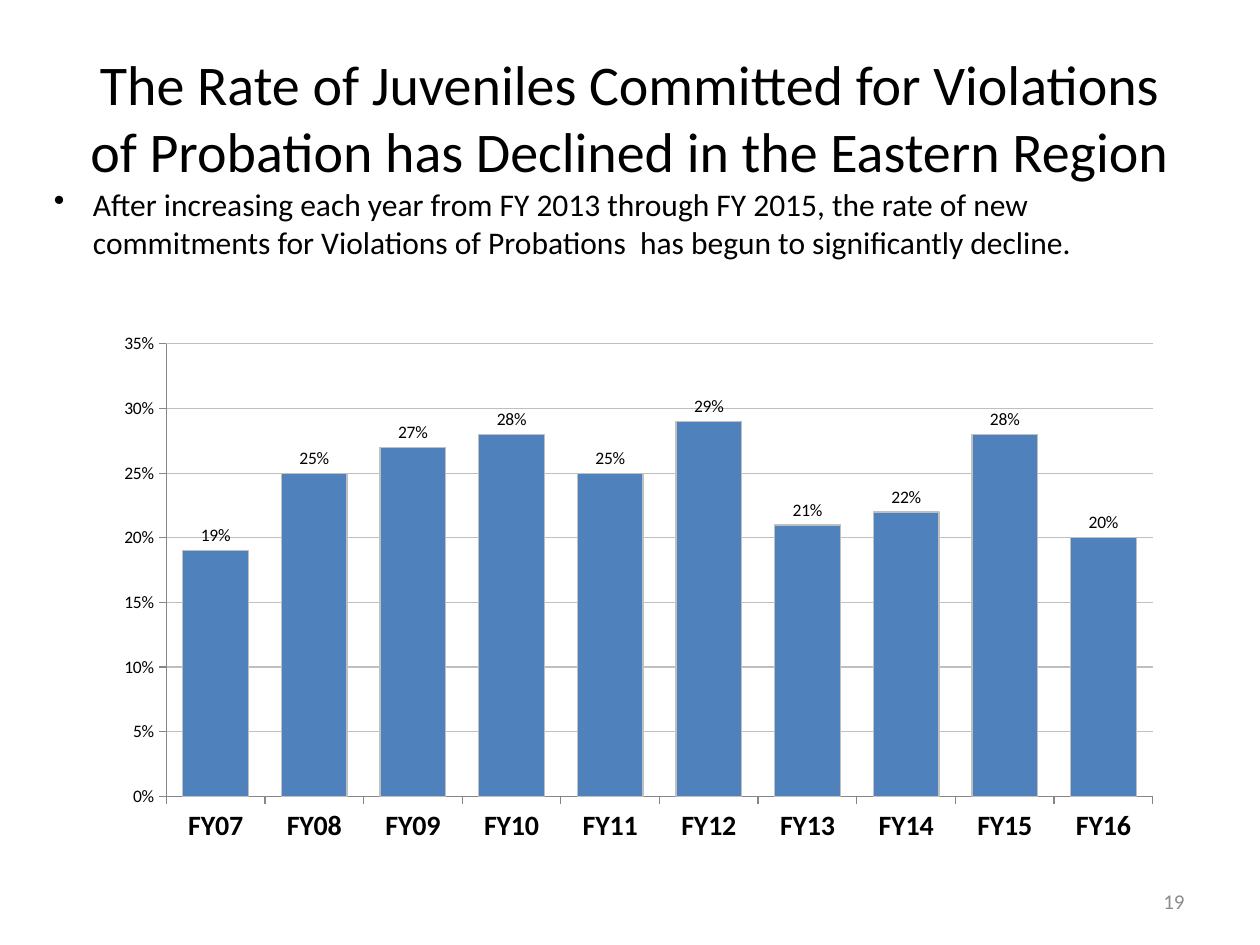
import pptx
import pptx.chart.data
import pptx.dml.color
import pptx.enum.chart
import pptx.enum.text
import pptx.oxml
import pptx.oxml.ns
import pptx.util

COLORS = {"text": "000000", "number": "8C8C8C", "bar": "4F81BD", "grid": "BFBFBF", "axis": "868686"}
RATES = {
    "FY07": 0.19, "FY08": 0.25, "FY09": 0.27, "FY10": 0.28, "FY11": 0.25,
    "FY12": 0.29, "FY13": 0.21, "FY14": 0.22, "FY15": 0.28, "FY16": 0.20,
}
PLOT_AREA = {"x": 0.11, "y": 0.08, "w": 0.87, "h": 0.72}


class SlideBuilder:
    """Holds the style and the current slide, and adds elements to it."""

    def __init__(self, prs, font="Calibri"):
        self.font = font
        self.slide = prs.slides.add_slide(prs.slide_layouts[5])

    def rgb(self, color):
        return pptx.dml.color.RGBColor.from_string(COLORS[color])

    def set_font(self, font, size, color="text", bold=False):
        font.name = self.font
        font.size = pptx.util.Pt(size)
        font.bold = bold
        font.color.rgb = self.rgb(color)

    def set_line(self, line, color):
        line.color.rgb = self.rgb(color)
        line.width = pptx.util.Pt(0.75)

    def fill_text(self, sp, text, size, align, anchor, color="text"):
        tf = sp.text_frame
        tf.word_wrap = True
        tf.auto_size = pptx.enum.text.MSO_AUTO_SIZE.NONE
        tf.vertical_anchor = anchor
        p = tf.paragraphs[0]
        p.text = text
        p.alignment = align
        self.set_font(p.font, size, color)
        return p

    def title(self, text, left, top, width, height):
        sp = self.slide.shapes.title
        sp.left, sp.top, sp.width, sp.height = map(pptx.util.Inches, (left, top, width, height))
        self.fill_text(sp, text, 32, pptx.enum.text.PP_ALIGN.CENTER, pptx.enum.text.MSO_ANCHOR.MIDDLE)

    def text(self, text, left, top, width, height, size, align, anchor, color="text"):
        sp = self.slide.shapes.add_textbox(*map(pptx.util.Inches, (left, top, width, height)))
        return self.fill_text(sp, text, size, align, anchor, color)

    def bullet(self, text, left, top, width, height):
        p = self.text(text, left, top, width, height, 18,
                      pptx.enum.text.PP_ALIGN.LEFT, pptx.enum.text.MSO_ANCHOR.TOP)
        pPr = p._p.get_or_add_pPr()
        pPr.set("marL", str(pptx.util.Inches(0.31)))
        pPr.set("indent", str(pptx.util.Inches(-0.31)))
        ns = pptx.oxml.ns.nsdecls("a")
        bullet = pptx.oxml.parse_xml(f'<a:buChar {ns} char="•"/>')
        pPr.find(pptx.oxml.ns.qn("a:defRPr")).addprevious(bullet)

    def column_chart(self, values, left, top, width, height):
        data = pptx.chart.data.CategoryChartData(number_format="0%")
        data.categories = list(values)
        data.add_series("Series 1", list(values.values()))
        chart = self.slide.shapes.add_chart(
            pptx.enum.chart.XL_CHART_TYPE.COLUMN_CLUSTERED,
            *map(pptx.util.Inches, (left, top, width, height)), data).chart
        chart.has_legend = False
        chart.has_title = False
        self.set_font(chart.font, 10)
        self.style_plot(chart.plots[0])
        self.style_axes(chart)
        self.place_plot_area(chart)

    def style_plot(self, plot):
        plot.gap_width = 50
        plot.vary_by_categories = False
        series = plot.series[0]
        series.format.fill.solid()
        series.format.fill.fore_color.rgb = self.rgb("bar")
        self.set_line(series.format.line, "grid")
        plot.has_data_labels = True
        labels = plot.data_labels
        labels.show_value = True
        labels.number_format = "0%"
        labels.number_format_is_linked = False
        labels.position = pptx.enum.chart.XL_LABEL_POSITION.OUTSIDE_END
        self.set_font(labels.font, 10)

    def style_axes(self, chart):
        rates, years = chart.value_axis, chart.category_axis
        for axis, size, bold in ((rates, 10, False), (years, 16, True)):
            axis.major_tick_mark = pptx.enum.chart.XL_TICK_MARK.OUTSIDE
            axis.minor_tick_mark = pptx.enum.chart.XL_TICK_MARK.NONE
            self.set_font(axis.tick_labels.font, size, bold=bold)
            self.set_line(axis.format.line, "axis")
        rates.minimum_scale, rates.maximum_scale, rates.major_unit = 0, 0.35, 0.05
        rates.tick_labels.number_format = "0%"
        rates.tick_labels.number_format_is_linked = False
        self.set_line(rates.major_gridlines.format.line, "grid")

    def place_plot_area(self, chart):
        plot_area = chart._chartSpace.chart.plotArea
        for layout in plot_area.findall(pptx.oxml.ns.qn("c:layout")):
            plot_area.remove(layout)
        modes = "".join(f'<c:{k}Mode val="edge"/>' for k in "xy")
        sizes = "".join(f'<c:{k} val="{v}"/>' for k, v in PLOT_AREA.items())
        plot_area.insert(0, pptx.oxml.parse_xml(
            f'<c:layout {pptx.oxml.ns.nsdecls("c")}><c:manualLayout>'
            f'<c:layoutTarget val="inner"/>{modes}{sizes}</c:manualLayout></c:layout>'))


def main():
    prs = pptx.Presentation()
    prs.slide_width, prs.slide_height = pptx.util.Inches(10), pptx.util.Inches(7.5)
    s = SlideBuilder(prs)
    s.title("The Rate of Juveniles Committed for Violations of Probation "
            "has Declined in the Eastern Region", 0.5, 0.3, 9, 1.25)
    s.text("19", 7.17, 6.95, 2.33, 0.4, 12, pptx.enum.text.PP_ALIGN.RIGHT,
           pptx.enum.text.MSO_ANCHOR.MIDDLE, "number")
    s.bullet("After increasing each year from FY 2013 through FY 2015, the rate of new commitments "
             "for Violations of Probations  has begun to significantly decline.", 0.33, 1.42, 9.33, 0.71)
    s.column_chart(RATES, 0.33, 2.33, 9, 4.99)
    prs.save("out.pptx")


if __name__ == "__main__":
    main()
